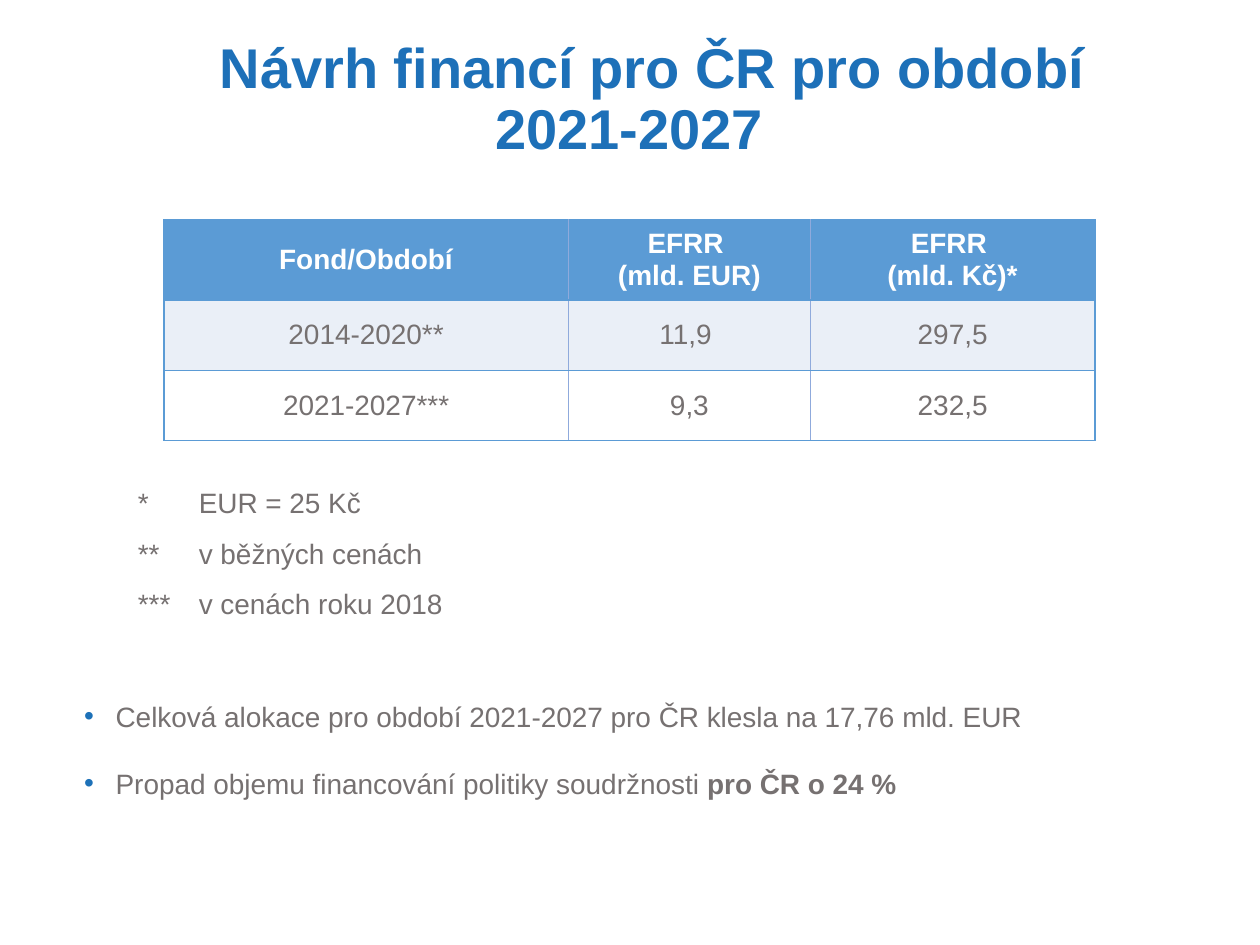
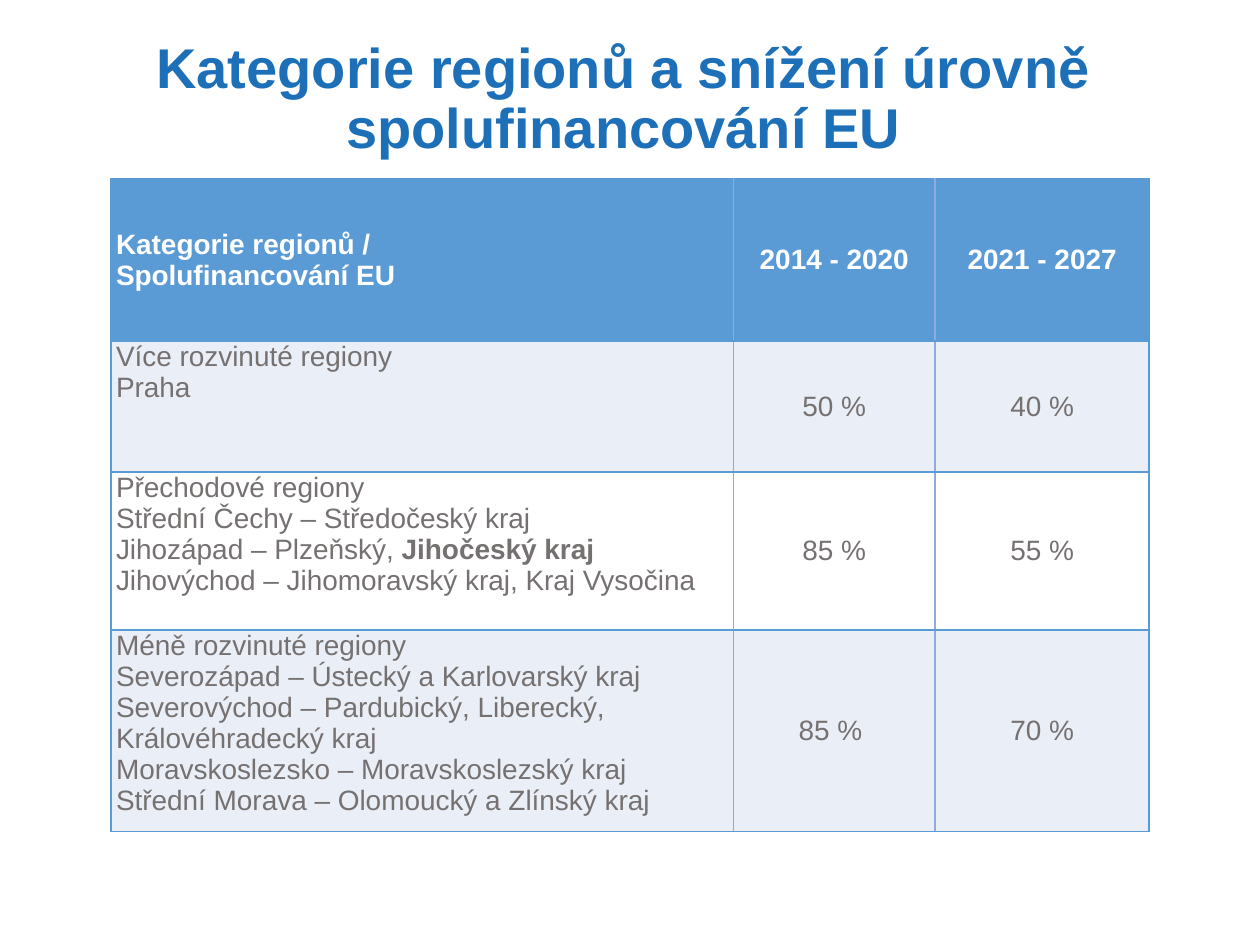
from dataclasses import dataclass
from typing import Any

from lxml import etree
from pptx import Presentation
from pptx import util as u
from pptx.dml import color
from pptx.enum import text
from pptx.oxml import ns

Pt = u.Pt


# Theme shared by both slides
@dataclass(frozen=True)
class Theme:
    font: str = "Arial"
    title: str = "1D70B8"
    bullet: str = "1D71B8"
    body: str = "767171"
    white: str = "FFFFFF"
    band: str = "EAEFF7"
    header: str = "5B9BD5"
    divider: str = "8FAADC"
    title_size: float = 32
    body_size: float = 16
    border: float = 1


THEME = Theme()
CENTER, LEFT = text.PP_ALIGN.CENTER, text.PP_ALIGN.LEFT
MIDDLE, TOP = text.MSO_ANCHOR.MIDDLE, text.MSO_ANCHOR.TOP


# Repeated elements; all lengths are in points
@dataclass(frozen=True)
class Box:
    left: float
    top: float
    width: float
    height: float

    def lengths(self) -> tuple:
        return tuple(Pt(n) for n in (self.left, self.top, self.width, self.height))


@dataclass(frozen=True)
class Line:
    """A paragraph; every second part between bars is bold."""
    text: str
    margin: float = 0
    indent: float = 0
    before: float = 0
    spacing: float = 1
    bullet: bool = False


@dataclass(frozen=True)
class Grid:
    left: float
    top: float
    columns: tuple
    heights: tuple
    rows: tuple
    margins: tuple = (7.2, 3.6)
    label_align: Any = CENTER
    label_anchor: Any = MIDDLE


def apply(target: Any, values: dict) -> None:
    for name, value in values.items():
        setattr(target, name, value)


def style_font(font: Any, size: float, colour: str, bold: bool) -> None:
    apply(font, {"name": THEME.font, "size": Pt(size), "bold": bold})
    font.color.rgb = color.RGBColor.from_string(colour)


def write_line(paragraph: Any, line: Line, size: float, colour: str,
               align: Any = LEFT, bold: bool = False) -> None:
    properties = paragraph._p.get_or_add_pPr()
    properties.set("marL", str(Pt(line.margin)))
    properties.set("indent", str(Pt(line.indent)))
    if line.bullet:
        bullet_colour = etree.SubElement(properties, ns.qn("a:buClr"))
        etree.SubElement(bullet_colour, ns.qn("a:srgbClr"), val=THEME.bullet)
        etree.SubElement(properties, ns.qn("a:buFont"), typeface=THEME.font)
        etree.SubElement(properties, ns.qn("a:buChar"), char="•")
    apply(paragraph, {"alignment": align, "line_spacing": line.spacing,
                      "space_before": Pt(line.before)})
    for index, part in enumerate(line.text.split("|")):
        run = paragraph.add_run()
        run.text = part
        style_font(run.font, size, colour, bold or index % 2 == 1)


def write_lines(frame: Any, lines: list, size: float, colour: str,
                align: Any = LEFT, bold: bool = False) -> None:
    for index, line in enumerate(lines):
        paragraph = frame.add_paragraph() if index else frame.paragraphs[0]
        write_line(paragraph, line, size, colour, align, bold)


def add_text(slide: Any, box: Box, lines: list, size: float, colour: str,
             align: Any = LEFT, anchor: Any = TOP, bold: bool = False) -> None:
    frame = slide.shapes.add_textbox(*box.lengths()).text_frame
    apply(frame, {"word_wrap": True, "vertical_anchor": anchor})
    write_lines(frame, lines, size, colour, align, bold)


def add_title(slide: Any, box: Box, line: Line) -> None:
    add_text(slide, box, [line], THEME.title_size, THEME.title, CENTER, MIDDLE, True)


def set_borders(cell: Any, first: bool, last: bool) -> None:
    sides = {"lnL": THEME.header if first else THEME.divider,
             "lnR": THEME.header if last else THEME.divider,
             "lnT": THEME.header, "lnB": THEME.header}
    properties = cell._tc.get_or_add_tcPr()
    for index, (side, colour) in enumerate(sides.items()):
        border = etree.Element(ns.qn(f"a:{side}"), w=str(Pt(THEME.border)))
        fill = etree.SubElement(border, ns.qn("a:solidFill"))
        etree.SubElement(fill, ns.qn("a:srgbClr"), val=colour)
        properties.insert(index, border)


def add_grid(slide: Any, grid: Grid) -> None:
    box = Box(grid.left, grid.top, sum(grid.columns), sum(grid.heights))
    table = slide.shapes.add_table(len(grid.rows), len(grid.columns), *box.lengths()).table
    for column, width in zip(table.columns, grid.columns):
        column.width = Pt(width)
    side, edge = (Pt(n) for n in grid.margins)
    for r, (values, height) in enumerate(zip(grid.rows, grid.heights)):
        table.rows[r].height = Pt(height)
        fill = THEME.header if r == 0 else THEME.band if r % 2 else THEME.white
        for c, value in enumerate(values):
            cell = table.cell(r, c)
            apply(cell, {"margin_left": side, "margin_right": side,
                         "margin_top": edge, "margin_bottom": edge,
                         "vertical_anchor": grid.label_anchor if r and c == 0 else MIDDLE})
            cell.fill.solid()
            cell.fill.fore_color.rgb = color.RGBColor.from_string(fill)
            set_borders(cell, c == 0, c == len(values) - 1)
            write_lines(cell.text_frame, [Line(part) for part in value.split("\n")],
                        THEME.body_size, THEME.body if r else THEME.white,
                        CENTER if c else grid.label_align, r == 0)


# Slide 1: proposed funding
def build_funding(slide: Any) -> None:
    add_title(slide, Box(62.6, 31, 594, 53.3),
              Line("Návrh financí pro ČR pro období 2021-2027", indent=26.7, spacing=0.9))
    add_grid(slide, Grid(93.6, 125.7, (231.2, 138.3, 162.6), (40.3,) * 3, (
        ("Fond/Období", "EFRR \n(mld. EUR)", "EFRR \n(mld. Kč)*"),
        ("2014-2020**", "11,9 ", "297,5"),
        ("2021-2027***", "9,3", "232,5"))))
    gap, section_gap = 9.6, 35.8
    notes = ("*\tEUR = 25 Kč", "**\tv běžných cenách", "***\tv cenách roku 2018")
    findings = ("Celková alokace pro období 2021-2027 pro ČR klesla na 17,76 mld. EUR",
                "Propad objemu financování politiky soudržnosti |pro ČR o 24 %")
    lines = [Line(note, 65.5, -34.8, gap if i else 0) for i, note in enumerate(notes)]
    lines += [Line(finding, 18, -18, gap if i else section_gap, 1.5, True)
              for i, finding in enumerate(findings)]
    add_text(slide, Box(41, 274, 638, 210), lines, THEME.body_size, THEME.body)


# Slide 2: region categories
def build_regions(slide: Any) -> None:
    add_title(slide, Box(47.5, 20.9, 617.8, 72.7),
              Line("Kategorie regionů a snížení úrovně spolufinancování EU", spacing=0.9))
    more_developed = "Více rozvinuté regiony\nPraha"
    transition = ("Přechodové regiony\n"
                  "Střední Čechy – Středočeský kraj\n"
                  "Jihozápad – Plzeňský, |Jihočeský kraj\n"
                  "Jihovýchod – Jihomoravský kraj, Kraj Vysočina")
    less_developed = ("Méně rozvinuté regiony\n"
                      "Severozápad – Ústecký a Karlovarský kraj\n"
                      "Severovýchod – Pardubický, Liberecký, Královéhradecký kraj\n"
                      "Moravskoslezsko – Moravskoslezský kraj\n"
                      "Střední Morava – Olomoucký a Zlínský kraj")
    add_grid(slide, Grid(63.4, 102.3, (355.7, 115.2, 122.4), (92.6, 74.9, 90.3, 113.1), (
        ("Kategorie regionů /\nSpolufinancování EU", "2014 - 2020", "2021 - 2027"),
        (more_developed, "50 %", "40 %"),
        (transition, "85 %", "55 %"),
        (less_developed, "85 % ", "70 %")), (2.9, 0), LEFT, TOP))


def main() -> None:
    presentation = Presentation()
    apply(presentation, {"slide_width": Pt(720), "slide_height": Pt(540)})
    for build in (build_funding, build_regions):
        build(presentation.slides.add_slide(presentation.slide_layouts[6]))
    presentation.save("out.pptx")


if __name__ == "__main__":
    main()
